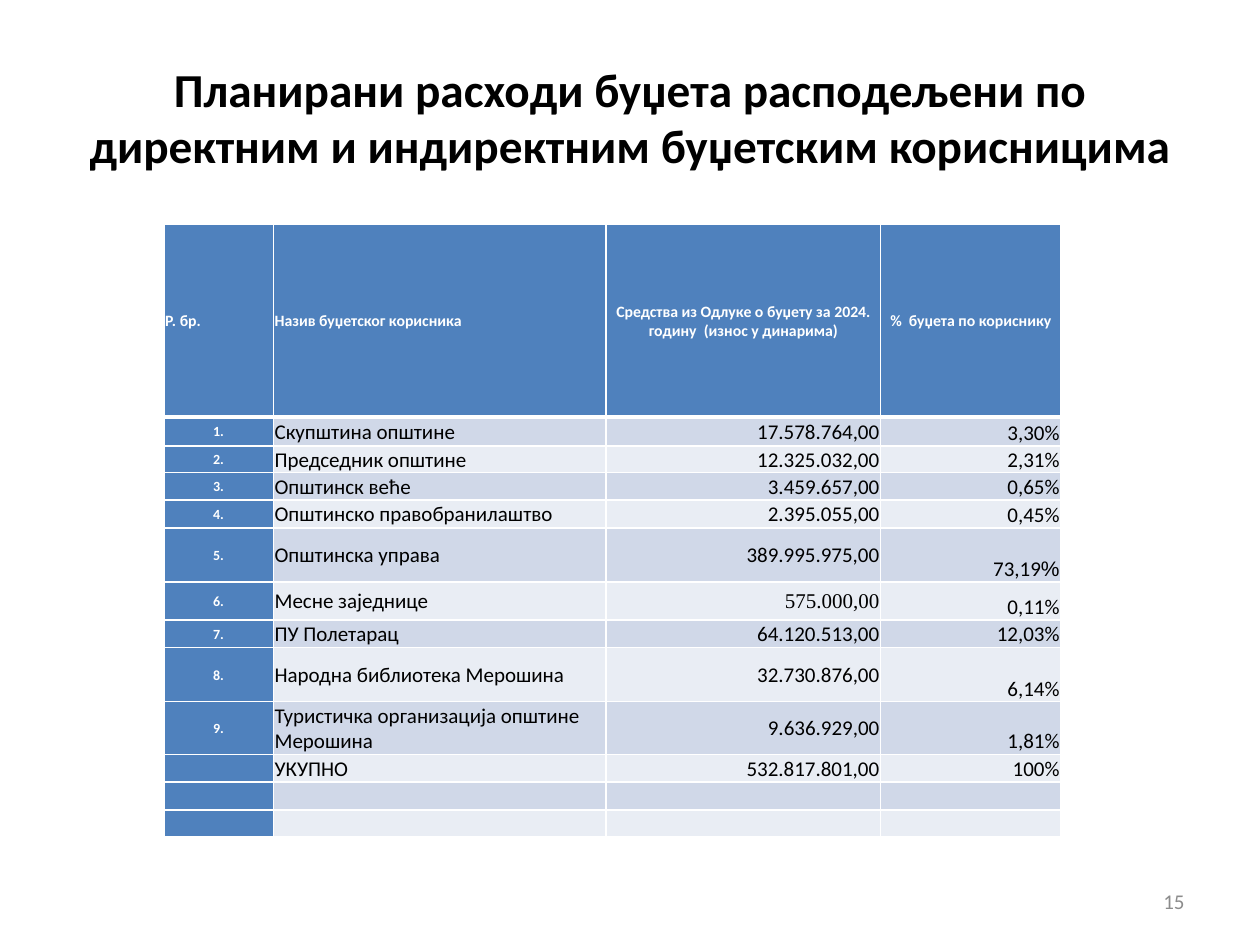
"""Build the slide with the planned budget split by direct and indirect users."""
import dataclasses

import lxml.etree
import pptx
import pptx.dml.color
import pptx.enum.text
import pptx.oxml.ns
import pptx.util


@dataclasses.dataclass(frozen=True)
class Theme:
    font: str = "Calibri"
    symbol_font: str = "Arial"
    serif_font: str = "Times New Roman"
    ink: str = "000000"
    paper: str = "FFFFFF"
    muted: str = "8C8C8C"
    accent: str = "4F81BD"
    bands: tuple = ("D0D8E8", "E9EDF4")
    title_size: int = 27
    body_size: int = 12
    header_size: int = 9
    index_size: int = 8


def style(para, size, color, bold=False, align=None, font=Theme.font):
    para.alignment = align
    para.font.name = font
    para.font.size = pptx.util.Pt(size)
    para.font.bold = bold
    para.font.color.rgb = pptx.dml.color.RGBColor.from_string(color)


def add_border(cell, side, color, width):
    properties = cell._tc.get_or_add_tcPr()
    qualify = pptx.oxml.ns.qn
    line = lxml.etree.SubElement(properties, qualify(f"a:ln{side}"), w=str(pptx.util.Pt(width)))
    fill = lxml.etree.SubElement(line, qualify("a:solidFill"))
    lxml.etree.SubElement(fill, qualify("a:srgbClr"), val=color)


theme = Theme()
LEFT, CENTER, RIGHT = (
    pptx.enum.text.PP_ALIGN.LEFT,
    pptx.enum.text.PP_ALIGN.CENTER,
    pptx.enum.text.PP_ALIGN.RIGHT,
)
MIDDLE, BOTTOM = pptx.enum.text.MSO_ANCHOR.MIDDLE, pptx.enum.text.MSO_ANCHOR.BOTTOM

deck = pptx.Presentation()
deck.slide_width = pptx.util.Inches(10)
deck.slide_height = pptx.util.Inches(7.5)
page = deck.slides.add_slide(deck.slide_layouts[6])

captions = [
    ("Планирани расходи буџета расподељени по директним и индиректним буџетским корисницима",
     (0.05, 0.04, 0.9, 0.167), theme.title_size, theme.ink, True, CENTER),
    ("15", (0.717, 0.927, 0.233, 0.053), theme.body_size, theme.muted, False, RIGHT),
]
for text, (left, top, width, height), size, color, bold, align in captions:
    box = page.shapes.add_textbox(
        int(left * deck.slide_width), int(top * deck.slide_height),
        int(width * deck.slide_width), int(height * deck.slide_height))
    box.text_frame.word_wrap = True
    box.text_frame.vertical_anchor = MIDDLE
    box.text_frame.text = text
    style(box.text_frame.paragraphs[0], size, color, bold, align)

headings = [
    "Р. бр.",
    "Назив буџетског корисника",
    "Средства из Одлуке о буџету за 2024. годину  (износ у динарима)",
    "%  буџета по кориснику",
]
users = [
    ("Скупштина општине", "17.578.764,00", "3,30%"),
    ("Председник општине", "12.325.032,00", "2,31%"),
    ("Општинск веће", "3.459.657,00", "0,65%"),
    ("Општинско правобранилаштво", "2.395.055,00", "0,45%"),
    ("Општинска управа", "389.995.975,00", "73,19"),
    ("Месне заједнице", "575.000,00", "0,11%"),
    ("ПУ Полетарац", "64.120.513,00", "12,03%"),
    ("Народна библиотека Мерошина", "32.730.876,00", "6,14%"),
    ("Туристичка организација општине Мерошина", "9.636.929,00", "1,81%"),
]
rows = [headings]
rows += [(f"{number}.", *user) for number, user in enumerate(users, 1)]
rows += [("", "УКУПНО", "532.817.801,00", "100%"), ("",) * 4, ("",) * 4]

column_widths = [0.87, 2.64, 2.18, 1.43]
row_heights = [1.53, 0.23, 0.21, 0.22, 0.22, 0.43, 0.3, 0.22, 0.43, 0.42, 0.22, 0.22, 0.2]
table = page.shapes.add_table(
    len(rows), len(headings),
    int(0.13 * deck.slide_width), int(0.2373 * deck.slide_height),
    pptx.util.Inches(sum(column_widths)), pptx.util.Inches(sum(row_heights))).table
for column, width in zip(table.columns, column_widths):
    column.width = pptx.util.Inches(width)
for row, height in zip(table.rows, row_heights):
    row.height = pptx.util.Inches(height)

header_aligns = [LEFT, LEFT, CENTER, CENTER]
body_aligns = [CENTER, LEFT, RIGHT, RIGHT]
for row_number, row in enumerate(rows):
    for column_number, text in enumerate(row):
        cell = table.cell(row_number, column_number)
        is_header, is_index = row_number == 0, column_number == 0
        for side in "LRTB":
            heavy = (is_header and side == "B") or (row_number == 1 and side == "T")
            add_border(cell, side, theme.paper, 3 if heavy else 1)
        shade = theme.accent if is_header or is_index else theme.bands[(row_number - 1) % 2]
        cell.fill.solid()
        cell.fill.fore_color.rgb = pptx.dml.color.RGBColor.from_string(shade)
        cell.margin_left = cell.margin_right = cell.margin_top = pptx.util.Inches(0.01)
        cell.margin_bottom = 0
        cell.vertical_anchor = BOTTOM if column_number == 3 and not is_header else MIDDLE
        cell.text = text
        para = cell.text_frame.paragraphs[0]
        if is_header:
            style(para, theme.header_size, theme.paper, True, header_aligns[column_number])
        elif is_index:
            style(para, theme.index_size, theme.paper, True, CENTER)
        else:
            style(para, theme.body_size, theme.ink, False, body_aligns[column_number])

table.cell(6, 2).text_frame.paragraphs[0].font.name = theme.serif_font
span = table.cell(5, 3).text_frame.paragraphs[0].add_run()
span.text = "%"
span.font.name = theme.symbol_font

deck.save("out.pptx")
